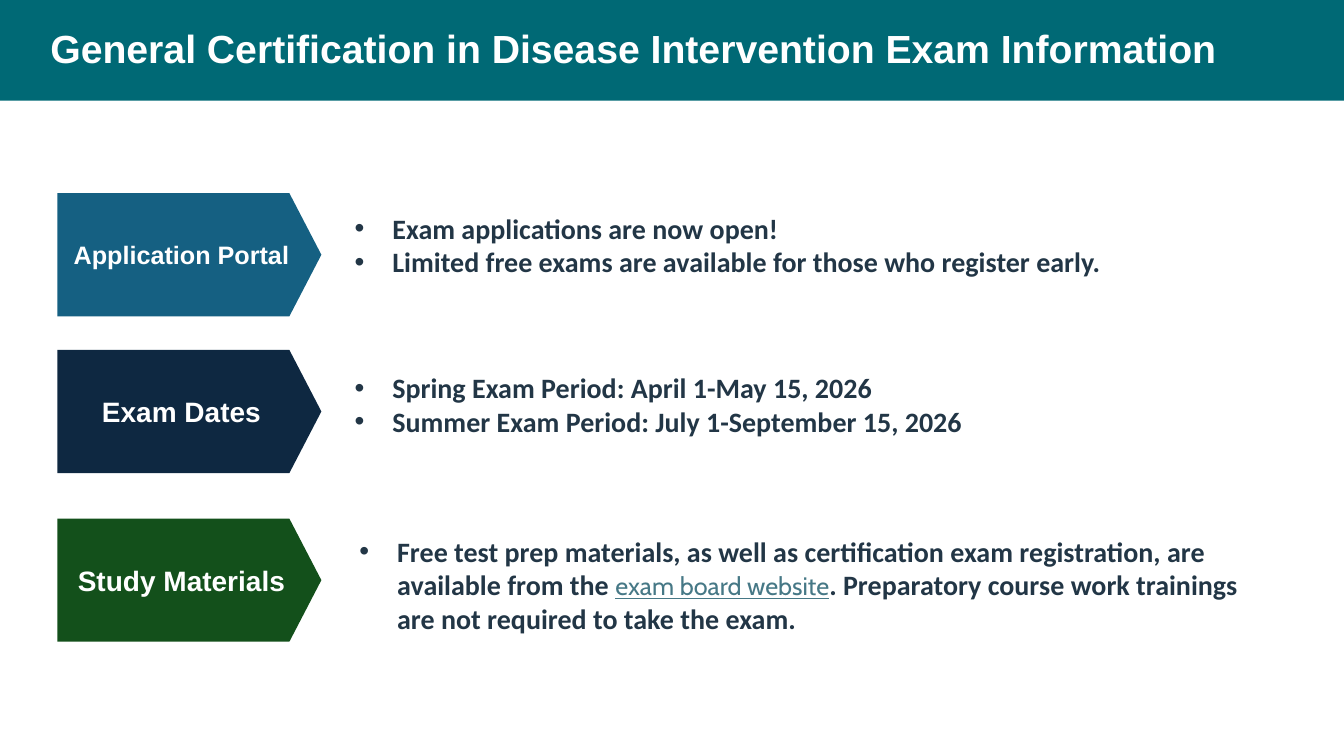
from lxml import etree
from pptx import Presentation
from pptx import util as u
from pptx.dml.color import RGBColor
from pptx.enum import shapes, text
from pptx.oxml import ns

COLORS = {
    "banner": "006975",
    "portal": "156082",
    "dates": "0E2841",
    "study": "13501B",
    "white": "FFFFFF",
    "body": "223646",
    "link": "467886",
}
INDENT = u.Cm(0.95)


def add_run(paragraph, wording, size, font_name, color, bold=True, underline=False):
    run = paragraph.add_run()
    run.text = wording
    run.font.size = u.Pt(size)
    run.font.name = font_name
    run.font.bold = bold
    run.font.underline = underline
    run.font.color.rgb = RGBColor.from_string(COLORS[color])


def add_filled_shape(kind, left, top, width, height, color):
    shape = slide.shapes.add_shape(kind, u.Cm(left), u.Cm(top), u.Cm(width), u.Cm(height))
    shape.shadow.inherit = False
    shape.fill.solid()
    shape.fill.fore_color.rgb = RGBColor.from_string(COLORS[color])
    shape.line.fill.background()
    shape.text_frame.word_wrap = True
    shape.text_frame.vertical_anchor = text.MSO_ANCHOR.MIDDLE
    return shape


presentation = Presentation()
presentation.slide_width = u.Cm(33.87)
presentation.slide_height = u.Cm(19.05)
slide = presentation.slides.add_slide(presentation.slide_layouts[6])

# Title banner
banner = add_filled_shape(shapes.MSO_SHAPE.RECTANGLE, 0, 0, 33.87, 2.54, "banner")
banner.text_frame.margin_left = u.Cm(1.27)
title = banner.text_frame.paragraphs[0]
title.alignment = text.PP_ALIGN.LEFT
title.line_spacing = 0.9
add_run(title, "General Certification in Disease Intervention Exam Information", 28, "Arial", "white")

# Each row: label, label size, colour, arrow top, text left, text top, text width, bullets
# Each bullet is a list of (wording, is_link) pieces
rows = [
    ("Application Portal", 18, "portal", 4.87, 8.69, 4.8, 21.8, [
        [("Exam applications are now open!", False)],
        [("Limited free exams are available for those who register early.", False)],
    ]),
    ("Exam Dates", 20, "dates", 8.82, 8.69, 8.82, 23.22, [
        [("Spring Exam Period: April 1-May 15, 2026", False)],
        [("Summer Exam Period: July 1-September 15, 2026", False)],
    ]),
    ("Study Materials", 20, "study", 13.07, 8.81, 13.36, 23.22, [
        [("Free test prep materials, as well as certification exam registration, "
          "are available from the ", False),
         ("exam board website", True),
         (". Preparatory course work trainings are not required to take the exam.", False)],
    ]),
]

for label, size, color, arrow_top, left, top, width, bullets in rows:
    arrow = add_filled_shape(shapes.MSO_SHAPE.PENTAGON, 1.45, arrow_top, 6.65, 3.1, color)
    arrow.adjustments[0] = 0.26
    heading = arrow.text_frame.paragraphs[0]
    heading.alignment = text.PP_ALIGN.CENTER
    add_run(heading, label, size, "Arial", "white")

    details = slide.shapes.add_textbox(u.Cm(left), u.Cm(top), u.Cm(width), u.Cm(2.74))
    frame = details.text_frame
    frame.word_wrap = True
    frame.vertical_anchor = text.MSO_ANCHOR.MIDDLE
    for index, pieces in enumerate(bullets):
        paragraph = frame.add_paragraph() if index else frame.paragraphs[0]
        properties = paragraph._p.get_or_add_pPr()
        properties.set("marL", str(INDENT))
        properties.set("indent", str(-INDENT))
        etree.SubElement(properties, ns.qn("a:buFont"), typeface="Arial")
        etree.SubElement(properties, ns.qn("a:buChar"), char="•")
        for wording, is_link in pieces:
            if is_link:
                add_run(paragraph, wording, 18, "Cabin", "link", bold=False, underline=True)
            else:
                add_run(paragraph, wording, 20, "Calibri", "body")

presentation.save("out.pptx")
